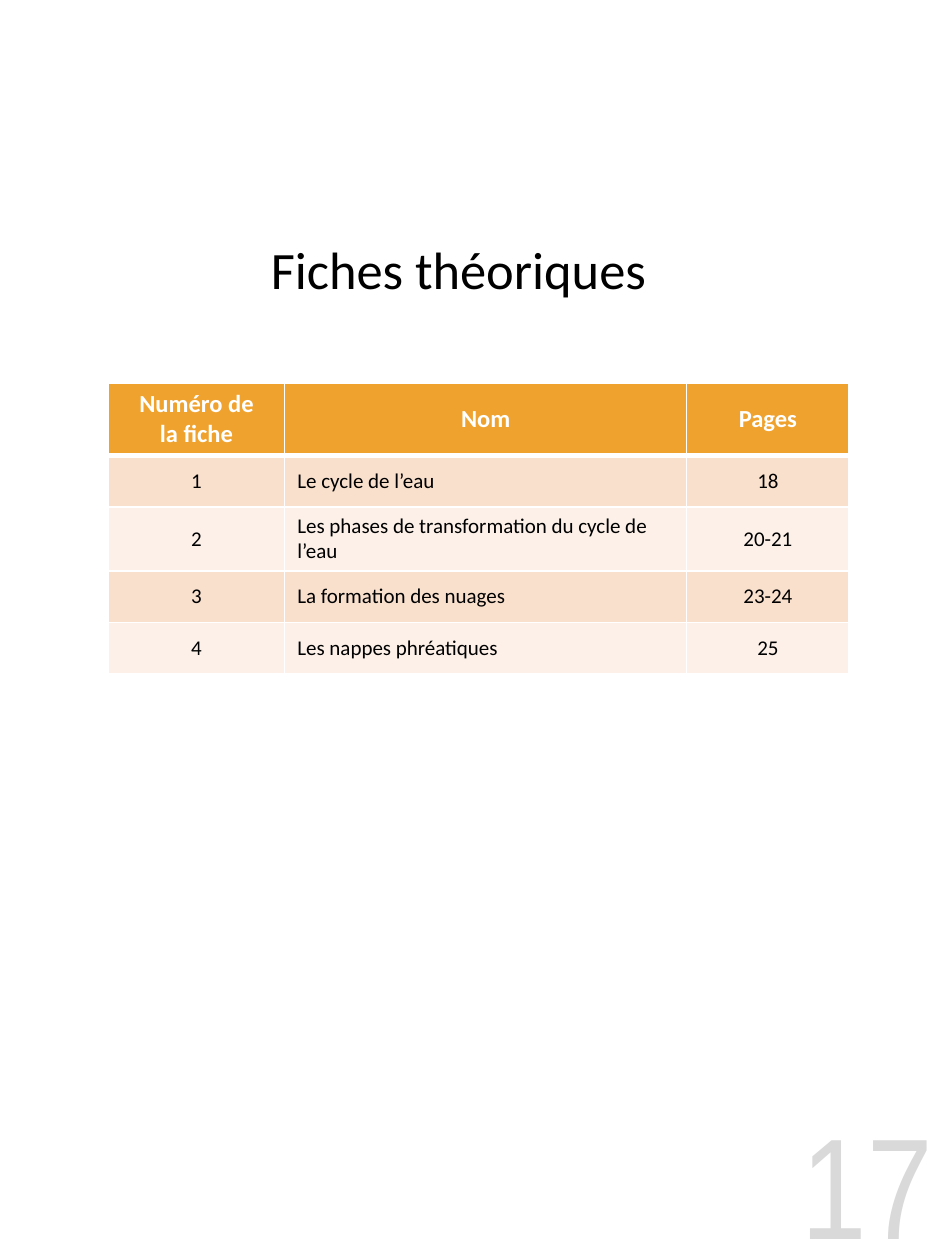
from dataclasses import dataclass

from lxml import etree
from pptx import Presentation
from pptx import util as u
from pptx.dml.color import RGBColor
from pptx.enum import text
from pptx.oxml import ns

Inches, Pt = u.Inches, u.Pt


@dataclass(frozen=True)
class Theme:
    body_font: str = "Calibri"
    number_font: str = "Arial Narrow"
    ink: str = "000000"
    white: str = "FFFFFF"
    header: str = "F0A22E"
    bands: tuple = ("F9E0CD", "FCF0E8")
    number: str = "D9D9D9"
    title_size: int = 30
    header_size: int = 14
    cell_size: int = 12
    number_size: int = 82
    thin: int = 1
    thick: int = 3


THEME = Theme()
HEADINGS = ("Numéro de\nla fiche", "Nom", "Pages")
SHEETS = (
    ("1", "Le cycle de l’eau", "18"),
    ("2", "Les phases de transformation du cycle de l’eau", "20-21"),
    ("3", "La formation des nuages", "23-24"),
    ("4", "Les nappes phréatiques", "25"),
)
COLUMN_WIDTHS = (1.4, 3.19, 1.29)


def style_paragraphs(frame, name, size, color, align, bold=False):
    for para in frame.paragraphs:
        para.alignment = align
        font = para.font
        font.name, font.size, font.bold = name, Pt(size), bold
        font.color.rgb = RGBColor.from_string(color)


def set_borders(cell, color, widths):
    properties = cell._tc.get_or_add_tcPr()
    for side, width in widths.items():
        line = etree.SubElement(properties, ns.qn(f"a:ln{side}"), w=str(Pt(width)))
        fill = etree.SubElement(line, ns.qn("a:solidFill"))
        etree.SubElement(fill, ns.qn("a:srgbClr"), val=color)


def place_title(page, left, top, width, height):
    title = page.shapes.title
    title.left, title.top, title.width, title.height = left, top, width, height
    frame = title.text_frame
    frame.text = "Fiches théoriques"
    frame.auto_size = text.MSO_AUTO_SIZE.NONE
    frame.vertical_anchor = text.MSO_ANCHOR.MIDDLE
    style_paragraphs(frame, THEME.body_font, THEME.title_size, THEME.ink,
                     text.PP_ALIGN.CENTER)


def place_sheet_table(page, left, top, width, height):
    rows = (HEADINGS, *SHEETS)
    table = page.shapes.add_table(len(rows), len(HEADINGS),
                                  left, top, width, height).table
    for column, column_width in zip(table.columns, COLUMN_WIDTHS):
        column.width = Inches(column_width)
    for i, row in enumerate(rows):
        is_header = i == 0
        fill = THEME.header if is_header else THEME.bands[(i - 1) % 2]
        size = THEME.header_size if is_header else THEME.cell_size
        color = THEME.white if is_header else THEME.ink
        borders = {
            "L": THEME.thin,
            "R": THEME.thin,
            "T": THEME.thick if i == 1 else THEME.thin,
            "B": THEME.thick if is_header else THEME.thin,
        }
        for j, words in enumerate(row):
            cell = table.cell(i, j)
            cell.text = words
            cell.vertical_anchor = text.MSO_ANCHOR.MIDDLE
            set_borders(cell, THEME.white, borders)
            cell.fill.solid()
            cell.fill.fore_color.rgb = RGBColor.from_string(fill)
            is_name = j == 1 and not is_header
            align = text.PP_ALIGN.LEFT if is_name else text.PP_ALIGN.CENTER
            style_paragraphs(cell.text_frame, THEME.body_font, size, color,
                             align, is_header)


def place_page_number(page, left, top, width, height):
    frame = page.shapes.add_textbox(left, top, width, height).text_frame
    frame.text = "17"
    frame.word_wrap = True
    frame.auto_size = text.MSO_AUTO_SIZE.NONE
    frame.vertical_anchor = text.MSO_ANCHOR.MIDDLE
    style_paragraphs(frame, THEME.number_font, THEME.number_size, THEME.number,
                     text.PP_ALIGN.RIGHT)


def main():
    deck = Presentation()
    deck.slide_width, deck.slide_height = Inches(7.5), Inches(10)
    page = deck.slides.add_slide(deck.slide_layouts.get_by_name("Title Only"))
    place_page_number(page, Inches(5.79), Inches(8.76), Inches(1.71), Inches(1.24))
    place_title(page, Inches(1.06), Inches(1.71), Inches(5.16), Inches(0.85))
    place_sheet_table(page, Inches(0.86), Inches(3.04), Inches(5.88), Inches(2.05))
    deck.save("out.pptx")


if __name__ == "__main__":
    main()
